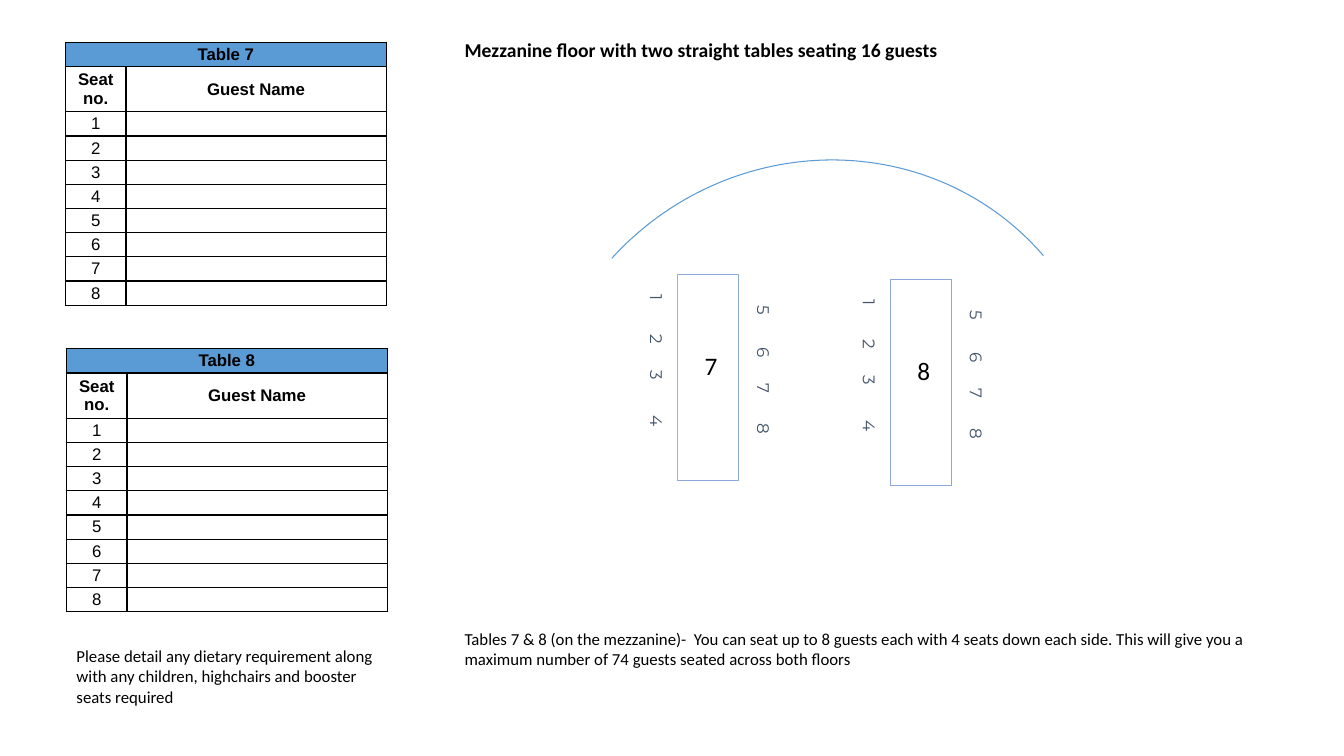
from dataclasses import dataclass

from lxml import etree
from pptx import Presentation
from pptx.dml.color import RGBColor
from pptx.enum.shapes import MSO_SHAPE
from pptx.enum.text import MSO_ANCHOR, PP_ALIGN
from pptx.oxml.ns import qn
from pptx.util import Inches, Pt

RECTANGLE, ARC = MSO_SHAPE.RECTANGLE, MSO_SHAPE.ARC
MIDDLE = MSO_ANCHOR.MIDDLE
LEFT, CENTER = PP_ALIGN.LEFT, PP_ALIGN.CENTER


@dataclass(frozen=True)
class Theme:
    black: str = "000000"
    white: str = "FFFFFF"
    blue: str = "5B9BD5"
    pale_blue: str = "8DA9DB"
    slate: str = "44546A"
    text_font: str = "Calibri"
    form_font: str = "Arial"
    seat_font: str = "Montserrat"
    body_size: int = 12
    title_size: int = 14
    number_size: int = 18


THEME = Theme()
SEATS = 8


def color(code):
    return RGBColor.from_string(code)


def write(frame, text, font, size, ink=THEME.black, bold=False, align=LEFT):
    frame.text = text
    para = frame.paragraphs[0]
    para.alignment = align
    for span in para.runs:
        span.font.name = font
        span.font.size = Pt(size)
        span.font.bold = bold
        span.font.color.rgb = color(ink)


def set_margins(holder, margin):
    holder.margin_left = holder.margin_right = Inches(margin)
    holder.margin_top = holder.margin_bottom = Inches(margin)


def add_text(shapes, box, text, size, bold=False, wrap=True):
    frame = shapes.add_textbox(*map(Inches, box)).text_frame
    frame.word_wrap = wrap
    write(frame, text, THEME.text_font, size, bold=bold)


def add_plain_shape(shapes, kind, box, rotation, fill=None, line=None, weight=1):
    shape = shapes.add_shape(kind, *map(Inches, box))
    shape.rotation = rotation
    shape.shadow.inherit = False
    if fill:
        shape.fill.solid()
        shape.fill.fore_color.rgb = color(fill)
    else:
        shape.fill.background()
    if line:
        shape.line.color.rgb = color(line)
        shape.line.width = Pt(weight)
    else:
        shape.line.fill.background()
    return shape


def add_seat_strip(shapes, box, seats, start, stops):
    """Seat numbers along one side; stops are tab distances from the first."""
    strip = add_plain_shape(shapes, RECTANGLE, box, 90, fill=THEME.white)
    frame = strip.text_frame
    set_margins(frame, 0)
    frame.margin_left = Inches(start)
    frame.vertical_anchor = MIDDLE
    write(frame, "\t".join(map(str, seats)), THEME.seat_font, THEME.body_size, THEME.slate)
    properties = frame.paragraphs[0]._p.get_or_add_pPr()
    tabs = etree.SubElement(properties, qn("a:tabLst"))
    for stop in stops:
        etree.SubElement(tabs, qn("a:tab"), pos=str(Inches(stop)), algn="l")


def add_dining_table(page, left, top, number):
    """A straight table with its number and a row of seats down each side."""
    shapes = page.shapes.add_group_shape().shapes
    add_plain_shape(shapes, RECTANGLE, (left + 0.83, top, 2.04, 0.61), 90, line=THEME.pale_blue)
    half = SEATS // 2
    add_seat_strip(shapes, (left, top + 0.1, 2.69, 0.4),
                   range(1, half + 1), 0.53, (0.39, 0.75, 1.2))
    add_text(shapes, (left + 1.72, top - 0.01, 0.31, 0.4), str(number),
             THEME.number_size, wrap=False)
    add_seat_strip(shapes, (left + 1.06, top + 0.19, 2.69, 0.4),
                   range(half + 1, SEATS + 1), 0.55, (0.41, 0.77, 1.17))


def add_mezzanine_plan(page, left, top):
    for index, number in enumerate((7, 8)):
        add_dining_table(page, left + 2.11 * index, top + 0.05 * index, number)
    arc = add_plain_shape(page.shapes, ARC, (left + 0.09, top - 1.81, 5.79, 5.59), 319.3,
                          line=THEME.blue, weight=0.75)
    arc.adjustments[0] = 157.488
    arc.adjustments[1] = 0


def add_borders(cell):
    properties = cell._tc.get_or_add_tcPr()
    for index, side in enumerate(("lnL", "lnR", "lnT", "lnB")):
        line = etree.Element(qn(f"a:{side}"), w=str(Pt(1)))
        fill = etree.SubElement(line, qn("a:solidFill"))
        etree.SubElement(fill, qn("a:srgbClr"), val=THEME.black)
        properties.insert(index, line)


def format_form_cell(cell, text, bold, fill):
    set_margins(cell, 0)
    cell.vertical_anchor = MIDDLE
    if fill:
        cell.fill.solid()
        cell.fill.fore_color.rgb = color(fill)
    else:
        cell.fill.background()
    if text:
        write(cell.text_frame, text, THEME.form_font, THEME.body_size, bold=bold, align=CENTER)
    else:
        etree.SubElement(cell.text_frame.paragraphs[0]._p, qn("a:endParaRPr"),
                         sz=str(THEME.body_size * 100))
    add_borders(cell)


def add_guest_form(page, left, top, number):
    rows = [(f"Table {number}", ""), ("Seat no.", "Guest Name")]
    rows += [(str(seat), "") for seat in range(1, SEATS + 1)]
    frame = page.shapes.add_table(len(rows), 2, Inches(left), Inches(top),
                                  Inches(3.18), Inches(2.61))
    form = frame.table
    form.first_row = form.horz_banding = False
    for column, width in zip(form.columns, (0.6, 2.58)):
        column.width = Inches(width)
    for row_index, texts in enumerate(rows):
        form.rows[row_index].height = Inches(0.45 if row_index == 1 else 0.24)
        for column_index, text in enumerate(texts):
            format_form_cell(form.cell(row_index, column_index), text,
                             bold=row_index < 2,
                             fill=THEME.blue if row_index == 0 else None)
    form.cell(0, 0).merge(form.cell(0, 1))


def add_notes_and_title(page):
    add_text(page.shapes, (0.66, 6.36, 3.18, 0.94),
             "Please detail any dietary requirement along with any children, "
             "highchairs and booster seats required", THEME.body_size)
    add_text(page.shapes, (4.51, 6.19, 7.97, 0.5),
             "Tables 7 & 8 (on the mezzanine)-  You can seat up to 8 guests each "
             "with 4 seats down each side. This will give you a maximum number of "
             "74 guests seated across both floors", THEME.body_size)
    add_text(page.shapes, (4.51, 0.33, 6.16, 0.34),
             "Mezzanine floor with two straight tables seating 16 guests",
             THEME.title_size, bold=True)


def main():
    deck = Presentation()
    deck.slide_width, deck.slide_height = Inches(13.33), Inches(7.5)
    page = deck.slides.add_slide(deck.slide_layouts[6])
    add_mezzanine_plan(page, 5.17, 3.44)
    add_guest_form(page, 0.65, 0.42, 7)
    add_guest_form(page, 0.66, 3.46, 8)
    add_notes_and_title(page)
    deck.save("out.pptx")


if __name__ == "__main__":
    main()
